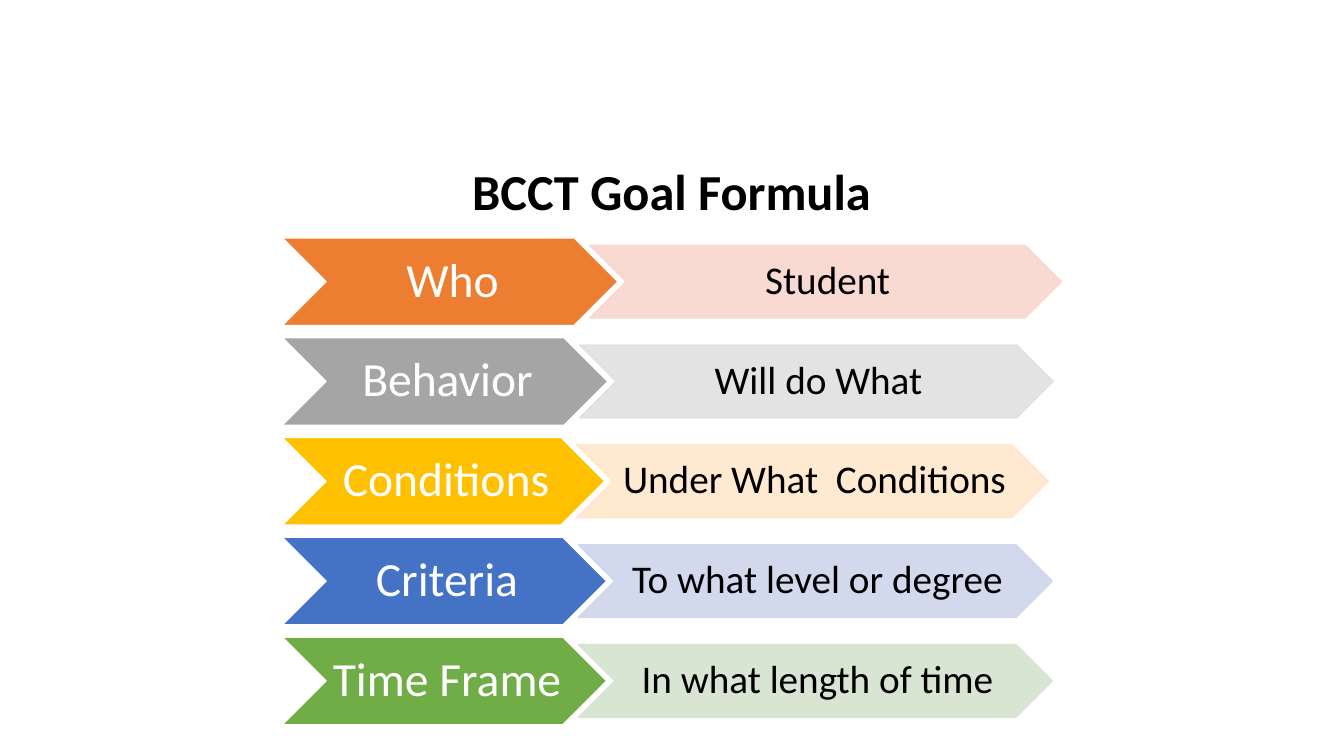
"""Build the BCCT Goal Formula slide: five rows of paired chevrons."""
import pptx
import pptx.util
import pptx.dml.color
import pptx.enum.shapes
import pptx.enum.text
import pptx.oxml.ns
from lxml import etree

Pt = pptx.util.Pt
RGB = pptx.dml.color.RGBColor
ANCHOR = pptx.enum.text.MSO_ANCHOR
CHEVRON = pptx.enum.shapes.MSO_SHAPE.CHEVRON
qn = pptx.oxml.ns.qn

WHITE = RGB(0xFF, 0xFF, 0xFF)
BLACK = RGB(0x00, 0x00, 0x00)
ORANGE, PALE_ORANGE = RGB(0xED, 0x7D, 0x31), RGB(0xF8, 0xD7, 0xCE)
GRAY, PALE_GRAY = RGB(0xA5, 0xA5, 0xA5), RGB(0xE1, 0xE1, 0xE1)
GOLD, PALE_GOLD = RGB(0xFF, 0xC0, 0x00), RGB(0xFF, 0xE8, 0xCC)
BLUE, PALE_BLUE = RGB(0x44, 0x72, 0xC4), RGB(0xCF, 0xD5, 0xEA)
GREEN, PALE_GREEN = RGB(0x70, 0xAD, 0x47), RGB(0xD5, 0xE3, 0xCF)

TITLE = "BCCT Goal Formula"
ROWS = [
    ("Who", 239.8, ORANGE, "Student", 337, PALE_ORANGE),
    ("Behavior", 232.6, GRAY, "Will do What", 338.4, PALE_GRAY),
    ("Conditions", 230.4, GOLD, "Under What  Conditions", 337, PALE_GOLD),
    ("Criteria", 231.8, BLUE, "To what level or degree", 338.4, PALE_BLUE),
    ("Time Frame", 231.8, GREEN, "In what length of time", 338.4, PALE_GREEN),
]
LEFT, TOP, PITCH = 201.6, 169.9, 71.3
LABEL_H, DETAIL_H, OVERLAP = 62.6, 52, 20.2


def format_text(p, size, color, bold=False):
    p.alignment = pptx.enum.text.PP_ALIGN.CENTER
    p.line_spacing = 0.9
    p.font.name = "Calibri"
    p.font.size = Pt(size)
    p.font.bold = bold
    p.font.color.rgb = color


def add_chevron(s, box, text, size, text_color, fill, line, inset):
    sp = s.shapes.add_shape(CHEVRON, *map(Pt, box))
    sp.shadow.inherit = False
    sp.fill.solid()
    sp.fill.fore_color.rgb = fill
    sp.line.color.rgb = line
    sp.line.width = Pt(1)
    tf = sp.text_frame
    tf.word_wrap = True
    tf.vertical_anchor = ANCHOR.MIDDLE
    tf.margin_left, tf.margin_right = Pt(inset), 0
    tf.margin_top = tf.margin_bottom = Pt(1.4)
    p = tf.paragraphs[0]
    p.text = text
    format_text(p, size, text_color)
    return sp


def set_opacity(sp, percent):
    for clr in sp.element.spPr.iter(qn("a:srgbClr")):
        etree.SubElement(clr, qn("a:alpha"), val=str(percent * 1000))


def main():
    prs = pptx.Presentation()
    prs.slide_width, prs.slide_height = Pt(960), Pt(540)
    s = prs.slides.add_slide(prs.slide_layouts[5])

    title = s.shapes.title
    title.left, title.top, title.width, title.height = map(Pt, (15.8, 77.8, 928, 84.2))
    tf = title.text_frame
    tf.text = TITLE
    tf.vertical_anchor = ANCHOR.BOTTOM
    format_text(tf.paragraphs[0], 36, BLACK, bold=True)

    for i, (label, label_w, color, detail, detail_w, pale) in enumerate(ROWS):
        y = TOP + i * PITCH
        add_chevron(s, (LEFT, y, label_w, LABEL_H), label, 34, WHITE, color, WHITE, 3.6)
        box = (LEFT + label_w - OVERLAP, y + (LABEL_H - DETAIL_H) / 2, detail_w, DETAIL_H)
        set_opacity(add_chevron(s, box, detail, 28, BLACK, pale, pale, 2.9), 90)

    prs.save("out.pptx")


if __name__ == "__main__":
    main()
